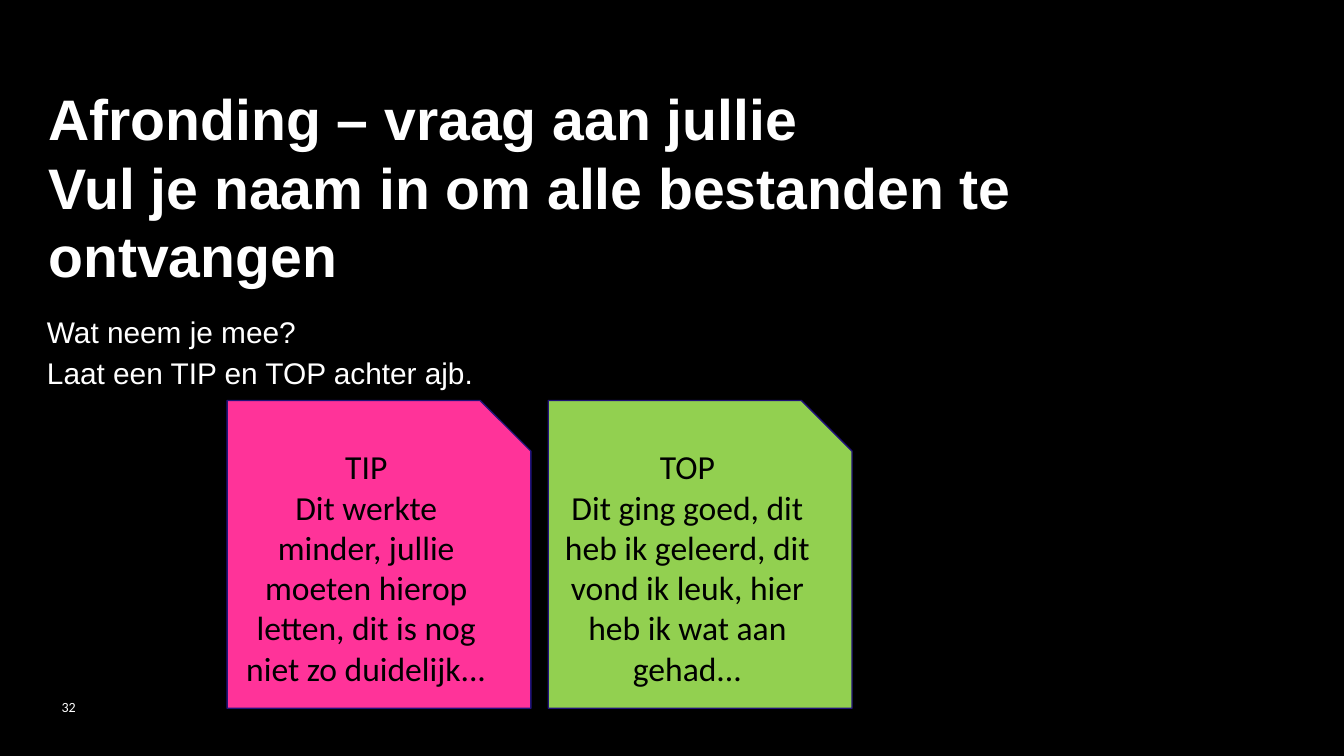
import pptx
import pptx.util
import pptx.dml.color
import pptx.enum.shapes
import pptx.enum.text

Inches = pptx.util.Inches
ALIGN = pptx.enum.text.PP_ALIGN
ANCHOR = pptx.enum.text.MSO_ANCHOR

# Content
TITLE = "Afronding – vraag aan jullie\vVul je naam in om alle bestanden te ontvangen"
QUESTIONS = ["Wat neem je mee?", "Laat een TIP en TOP achter ajb."]
NOTES = [
    ("TIP", "Dit werkte minder, jullie moeten hierop letten, dit is nog niet zo duidelijk...", "tip"),
    ("TOP", "Dit ging goed, dit heb ik geleerd, dit vond ik leuk, hier heb ik wat aan gehad...", "top"),
]
PAGE_NUMBER = "32"

THEME = {
    "colours": {"background": "000000", "light": "FFFFFF", "dark": "000000",
                "outline": "211379", "tip": "FF3399", "top": "92D050"},
    "sizes": {"title": 30.6, "body": 16, "note": 18, "number": 7.5},
    "fonts": {"main": "Arial", "note": "Calibri"},
}

# Note grid
NOTE_LEFT, NOTE_TOP, NOTE_WIDTH, NOTE_HEIGHT, NOTE_GAP = 1.69, 2.98, 2.26, 2.29, 0.13


def colour(name):
    return pptx.dml.color.RGBColor.from_string(THEME["colours"][name])


def write(box, lines, size, font, ink, bold=False, align=ALIGN.LEFT,
          anchor=ANCHOR.TOP, spacing=1.0, margin=None):
    frame = box.text_frame
    frame.text = "\n".join(lines)
    frame.word_wrap = True
    frame.auto_size = pptx.enum.text.MSO_AUTO_SIZE.NONE
    frame.vertical_anchor = anchor
    if margin is not None:
        frame.margin_left = frame.margin_right = Inches(margin)
        frame.margin_top = frame.margin_bottom = Inches(margin)
    for para in frame.paragraphs:
        para.alignment = align
        para.line_spacing = spacing
        para.space_before = pptx.util.Pt(0)
        para.font.size = pptx.util.Pt(THEME["sizes"][size])
        for span in para.runs:
            span.font.size = pptx.util.Pt(THEME["sizes"][size])
            span.font.name = THEME["fonts"][font]
            span.font.bold = bold
            span.font.color.rgb = colour(ink)


def main():
    deck = pptx.Presentation()
    deck.slide_width, deck.slide_height = Inches(10), Inches(5.625)
    page = deck.slides.add_slide(deck.slide_layouts.get_by_name("Title Only"))
    page.background.fill.solid()
    page.background.fill.fore_color.rgb = colour("background")

    # Title
    title = page.shapes.title
    title.left, title.top = Inches(0.36), Inches(0.62)
    title.width, title.height = Inches(8.73), Inches(1.68)
    write(title, [TITLE], "title", "main", "light", bold=True, margin=0)

    # Questions
    body = page.shapes.add_textbox(Inches(0.35), Inches(2.3), Inches(8.73), Inches(2.64))
    write(body, QUESTIONS, "body", "main", "light", spacing=1.14, margin=0)

    # Page number
    number = page.shapes.add_textbox(Inches(0.36), Inches(5.11), Inches(0.39), Inches(0.3))
    write(number, [PAGE_NUMBER], "number", "note", "light", anchor=ANCHOR.MIDDLE)

    # Sticky notes
    for column, (heading, message, fill) in enumerate(NOTES):
        left = NOTE_LEFT + column * (NOTE_WIDTH + NOTE_GAP)
        note = page.shapes.add_shape(
            pptx.enum.shapes.MSO_SHAPE.SNIP_1_RECTANGLE,
            Inches(left), Inches(NOTE_TOP), Inches(NOTE_WIDTH), Inches(NOTE_HEIGHT))
        note.shadow.inherit = False
        note.fill.solid()
        note.fill.fore_color.rgb = colour(fill)
        note.line.color.rgb = colour("outline")
        note.line.width = pptx.util.Pt(0.75)
        write(note, [heading, message], "note", "note", "dark",
              align=ALIGN.CENTER, anchor=ANCHOR.MIDDLE)

    deck.save("out.pptx")


if __name__ == "__main__":
    main()
